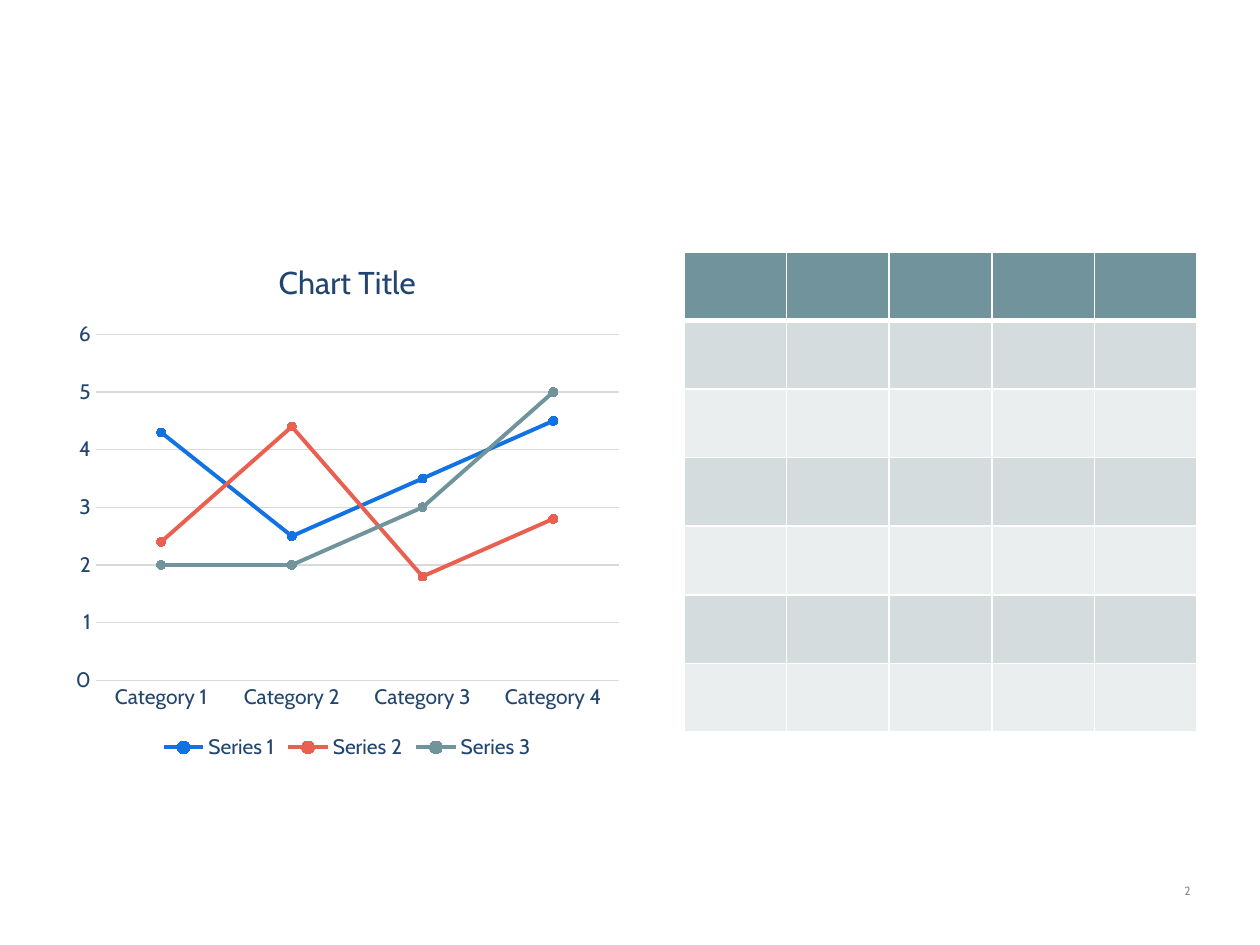
from lxml.etree import SubElement
from pptx import Presentation
from pptx.chart.data import CategoryChartData
from pptx.dml.color import RGBColor
from pptx.enum.chart import XL_CHART_TYPE, XL_LEGEND_POSITION, XL_MARKER_STYLE, XL_TICK_MARK
from pptx.enum.text import MSO_ANCHOR, PP_ALIGN
from pptx.oxml.ns import qn
from pptx.util import Cm, Pt

NAVY = RGBColor(0x22, 0x45, 0x70)
BLUE = RGBColor(0x12, 0x71, 0xE3)
CORAL = RGBColor(0xE9, 0x60, 0x51)
TEAL = RGBColor(0x71, 0x93, 0x9C)
BAND_DARK = RGBColor(0xD5, 0xDC, 0xDE)
BAND_LIGHT = RGBColor(0xEB, 0xEE, 0xEF)
GRID = RGBColor(0xD9, 0xD9, 0xD9)
GREY = RGBColor(0x8C, 0x8C, 0x8C)
WHITE = RGBColor(0xFF, 0xFF, 0xFF)


class SlideBuilder:
    font_name = "Cabin"

    def __init__(self, slide):
        self.slide = slide

    def style_font(self, font, size, color):
        font.name = self.font_name
        font.size = Pt(size)
        font.bold = False
        font.color.rgb = color

    def style_line(self, line, color, width):
        line.color.rgb = color
        line.width = Pt(width)

    def text(self, content, left, top, width, height, size, color, align):
        box = self.slide.shapes.add_textbox(Cm(left), Cm(top), Cm(width), Cm(height))
        frame = box.text_frame
        frame.word_wrap = True
        frame.vertical_anchor = MSO_ANCHOR.TOP
        frame.margin_left = frame.margin_right = frame.margin_top = frame.margin_bottom = 0
        frame.text = content
        paragraph = frame.paragraphs[0]
        paragraph.alignment = align
        self.style_font(paragraph.runs[0].font, size, color)

    def line_chart(self, title, categories, series, left, top, width, height):
        data = CategoryChartData()
        data.categories = categories
        for name, values, _ in series:
            data.add_series(name, values)
        chart = self.slide.shapes.add_chart(
            XL_CHART_TYPE.LINE_MARKERS, Cm(left), Cm(top), Cm(width), Cm(height), data).chart
        self.style_font(chart.font, 10, NAVY)

        # Title and legend
        chart.has_title = True
        chart.chart_title.text_frame.text = title
        chart.chart_title.include_in_layout = False
        self.style_font(chart.chart_title.text_frame.paragraphs[0].runs[0].font, 18, NAVY)
        chart.has_legend = True
        chart.legend.position = XL_LEGEND_POSITION.BOTTOM
        chart.legend.include_in_layout = False
        self.style_font(chart.legend.font, 12, NAVY)

        # Axes
        for axis in (chart.category_axis, chart.value_axis):
            axis.major_tick_mark = axis.minor_tick_mark = XL_TICK_MARK.NONE
            self.style_font(axis.tick_labels.font, 12, NAVY)
        self.style_line(chart.category_axis.format.line, GRID, 0.75)
        chart.value_axis.format.line.fill.background()
        chart.value_axis.has_major_gridlines = True
        self.style_line(chart.value_axis.major_gridlines.format.line, GRID, 0.75)

        # Series
        plot = chart.plots[0]
        plot.vary_by_categories = False
        for line, (_, _, color) in zip(plot.series, series):
            line.smooth = False
            self.style_line(line.format.line, color, 2.25)
            line.marker.style = XL_MARKER_STYLE.CIRCLE
            line.marker.size = 5
            line.marker.format.fill.solid()
            line.marker.format.fill.fore_color.rgb = color
            line.marker.format.line.color.rgb = color

    def cell_borders(self, cell, widths):
        properties = cell._tc.get_or_add_tcPr()
        for position, (side, width) in enumerate(widths.items()):
            border = SubElement(properties, qn(f"a:ln{side}"), w=str(Pt(width)))
            SubElement(SubElement(border, qn("a:solidFill")), qn("a:srgbClr"), val=str(WHITE))
            properties.insert(position, border)  # borders precede the fill

    def banded_table(self, rows, columns, left, top, width, height):
        table = self.slide.shapes.add_table(
            rows, columns, Cm(left), Cm(top), Cm(width), Cm(height)).table
        for row in range(rows):
            fill_color = TEAL if row == 0 else (BAND_LIGHT, BAND_DARK)[row % 2]
            widths = {"L": 1, "R": 1, "T": 3 if row == 1 else 1, "B": 3 if row == 0 else 1}
            for column in range(columns):
                cell = table.cell(row, column)
                cell.fill.solid()
                cell.fill.fore_color.rgb = fill_color
                self.cell_borders(cell, widths)


def main():
    presentation = Presentation()
    presentation.slide_width, presentation.slide_height = Cm(25.4), Cm(19.05)
    builder = SlideBuilder(presentation.slides.add_slide(presentation.slide_layouts[6]))

    # Page number
    builder.text("2", 18.29, 17.81, 5.71, 0.58, 6.8, GREY, PP_ALIGN.RIGHT)

    # Line chart on the left
    builder.line_chart(
        "Chart Title",
        [f"Category {number}" for number in range(1, 5)],
        [("Series 1", (4.3, 2.5, 3.5, 4.5), BLUE),
         ("Series 2", (2.4, 4.4, 1.8, 2.8), CORAL),
         ("Series 3", (2, 2, 3, 5), TEAL)],
        1.3, 4.78, 11.4, 10.64)

    # Empty table on the right
    builder.banded_table(7, 5, 13.79, 5.08, 10.34, 9.68)

    presentation.save("out.pptx")


if __name__ == "__main__":
    main()
